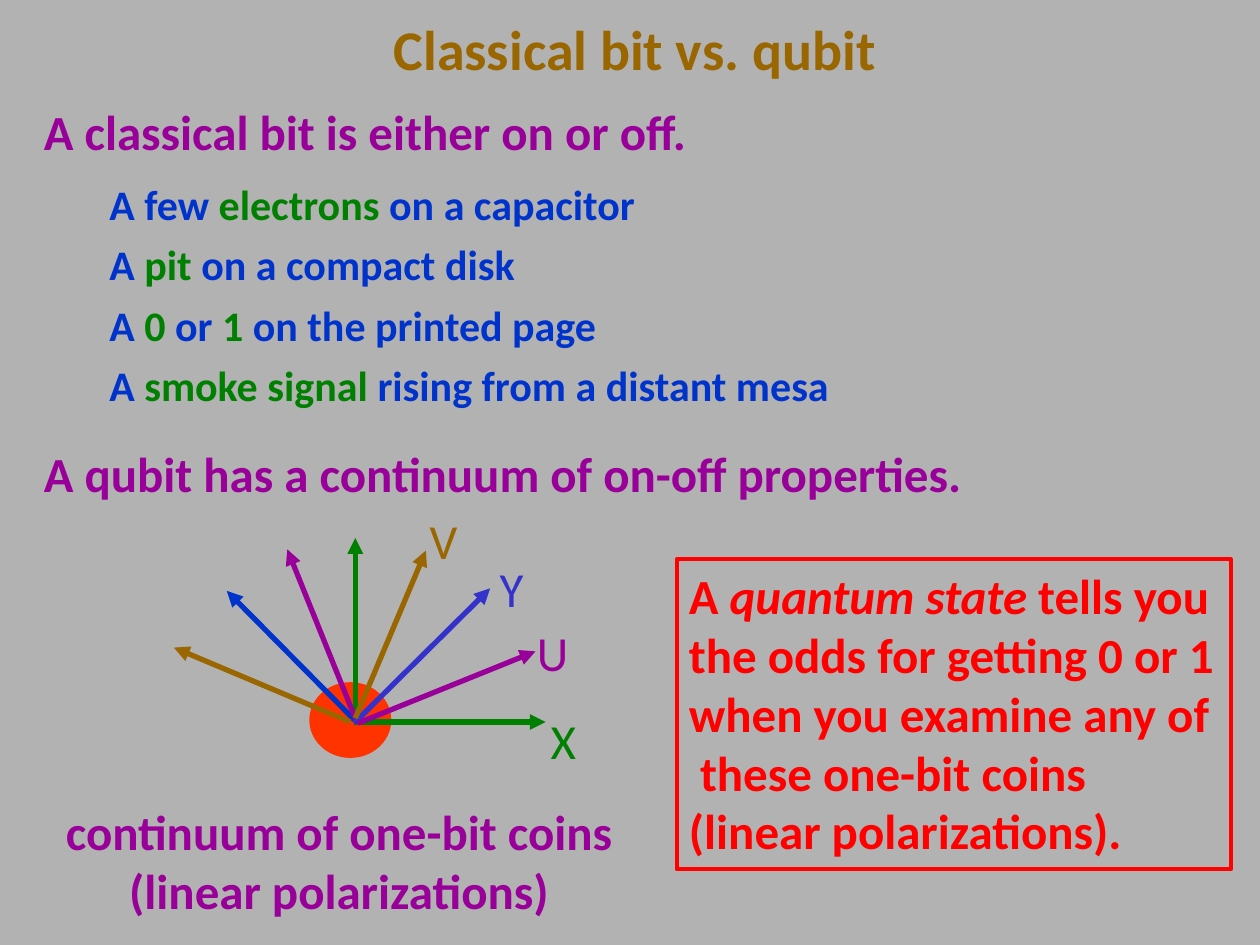
from dataclasses import dataclass
from lxml import etree
from pptx import Presentation
from pptx.dml.color import RGBColor
from pptx.enum.shapes import MSO_CONNECTOR, MSO_SHAPE
from pptx.enum.text import MSO_ANCHOR, MSO_AUTO_SIZE, PP_ALIGN
from pptx.oxml.ns import qn
from pptx.util import Inches, Pt

LINE = MSO_CONNECTOR.STRAIGHT
OVAL, RECT = MSO_SHAPE.OVAL, MSO_SHAPE.RECTANGLE
LEFT, CENTER = PP_ALIGN.LEFT, PP_ALIGN.CENTER
TOP = MSO_ANCHOR.TOP
GROW = MSO_AUTO_SIZE.SHAPE_TO_FIT_TEXT

GRAY, BROWN, PURPLE = "B2B2B2", "996600", "990099"
BLUE, GREEN, INDIGO = "0033CC", "008000", "3333CC"
RED, ORANGE = "FF0000", "FF3300"


@dataclass
class Run:
    text: str
    color: str
    size: int = 28
    bold: bool = True
    italic: bool = False


@dataclass
class Box:
    left: float
    top: float
    width: float
    height: float
    runs: list[Run]
    align: PP_ALIGN = LEFT
    wrap: bool = True


@dataclass
class Ray:
    start: tuple[float, float]
    end: tuple[float, float]
    color: str


def rgb(code: str) -> RGBColor:
    return RGBColor.from_string(code)


def write(shape, runs: list[Run], align: PP_ALIGN, wrap: bool) -> None:
    frame = shape.text_frame
    frame.word_wrap = wrap
    frame.auto_size = GROW
    frame.vertical_anchor = TOP
    para = frame.paragraphs[0]
    para.alignment = align
    for item in runs:
        run = para.add_run()
        run.text = item.text
        font = run.font
        font.name = "Calibri"
        font.size = Pt(item.size)
        font.bold = item.bold
        font.italic = item.italic
        font.color.rgb = rgb(item.color)


def add_text(slide, box: Box) -> None:
    shape = slide.shapes.add_textbox(
        Inches(box.left), Inches(box.top), Inches(box.width), Inches(box.height))
    write(shape, box.runs, box.align, box.wrap)


def add_shape(slide, kind: MSO_SHAPE, left: float, top: float,
              width: float, height: float, color: str):
    shape = slide.shapes.add_shape(
        kind, Inches(left), Inches(top), Inches(width), Inches(height))
    shape.shadow.inherit = False
    shape.line.color.rgb = rgb(color)
    shape.line.width = Pt(2.25)
    return shape


def add_ray(slide, ray: Ray) -> None:
    points = [Inches(value) for value in ray.start + ray.end]
    line = slide.shapes.add_connector(LINE, *points)
    line.line.color.rgb = rgb(ray.color)
    line.line.width = Pt(3)
    tail = etree.SubElement(line.line._get_or_add_ln(), qn("a:tailEnd"))
    tail.set("type", "triangle")
    etree.SubElement(line._element.spPr, qn("a:effectLst"))


CLAIMS = [
    (0.76, 5.37, "A classical bit is either on or off."),
    (3.47, 7.71, "A qubit has a continuum of on-off properties."),
]
CASES = [
    (4.41, ["A few ", "electrons", " on a capacitor"]),
    (3.45, ["A ", "pit", " on a compact disk"]),
    (4.1, ["A ", "0", " or ", "1", " on the printed page"]),
    (5.97, ["A ", "smoke signal", " rising from a distant mesa"]),
]
RAYS = [
    Ray((2.81, 5.73), (4.33, 5.73), GREEN),
    Ray((2.82, 5.71), (2.82, 4.27), GREEN),
    Ray((2.81, 5.74), (3.89, 4.67), INDIGO),
    Ray((2.81, 5.71), (1.8, 4.69), BLUE),
    Ray((2.84, 5.74), (4.25, 5.17), PURPLE),
    Ray((2.82, 5.7), (2.28, 4.36), PURPLE),
    Ray((2.82, 5.7), (3.38, 4.37), BROWN),
    Ray((2.78, 5.73), (1.38, 5.14), BROWN),
]
LABELS = [
    ("X", 4.11, 5.59, 0.72, GREEN),
    ("Y", 3.71, 4.38, 0.7, INDIGO),
    ("U", 3.98, 4.89, 0.81, PURPLE),
    ("V", 3.14, 4, 0.76, BROWN),
]
STATE = [
    Run("A ", RED),
    Run("quantum state ", RED, italic=True),
    Run("tells you the odds for getting 0 or 1 when you examine any of"
        "  these one-bit coins (linear polarizations).", RED),
]


def main() -> None:
    deck = Presentation()
    deck.slide_width, deck.slide_height = Inches(10), Inches(7.5)
    slide = deck.slides.add_slide(deck.slide_layouts[6])
    fill = slide.background.fill
    fill.solid()
    fill.fore_color.rgb = rgb(GRAY)

    title = Run("Classical bit vs. qubit", BROWN, 32)
    add_text(slide, Box(0.04, 0.07, 10, 0.64, [title], CENTER))
    for row, (width, parts) in enumerate(CASES):
        runs = [Run(part, GREEN if spot % 2 else BLUE, 24)
                for spot, part in enumerate(parts)]
        add_text(slide, Box(0.77, 1.37 + row * 0.477, width, 0.51, runs, wrap=False))
    for top, width, text in CLAIMS:
        add_text(slide, Box(0.25, top, width, 0.57, [Run(text, PURPLE)], wrap=False))

    source = add_shape(slide, OVAL, 2.47, 5.43, 0.62, 0.57, ORANGE)
    source.fill.solid()
    source.fill.fore_color.rgb = rgb(ORANGE)
    for ray in RAYS:
        add_ray(slide, ray)
    for text, left, top, width, color in LABELS:
        label = Run(text, color, bold=False)
        add_text(slide, Box(left, top, width, 0.57, [label], CENTER))

    coins = Run("continuum of one-bit coins (linear polarizations)", PURPLE)
    add_text(slide, Box(0.38, 6.31, 4.62, 1.04, [coins], CENTER))
    panel = add_shape(slide, RECT, 5.37, 4.44, 4.4, 2.46, RED)
    panel.fill.background()
    write(panel, STATE, LEFT, True)
    deck.save("out.pptx")


if __name__ == "__main__":
    main()
